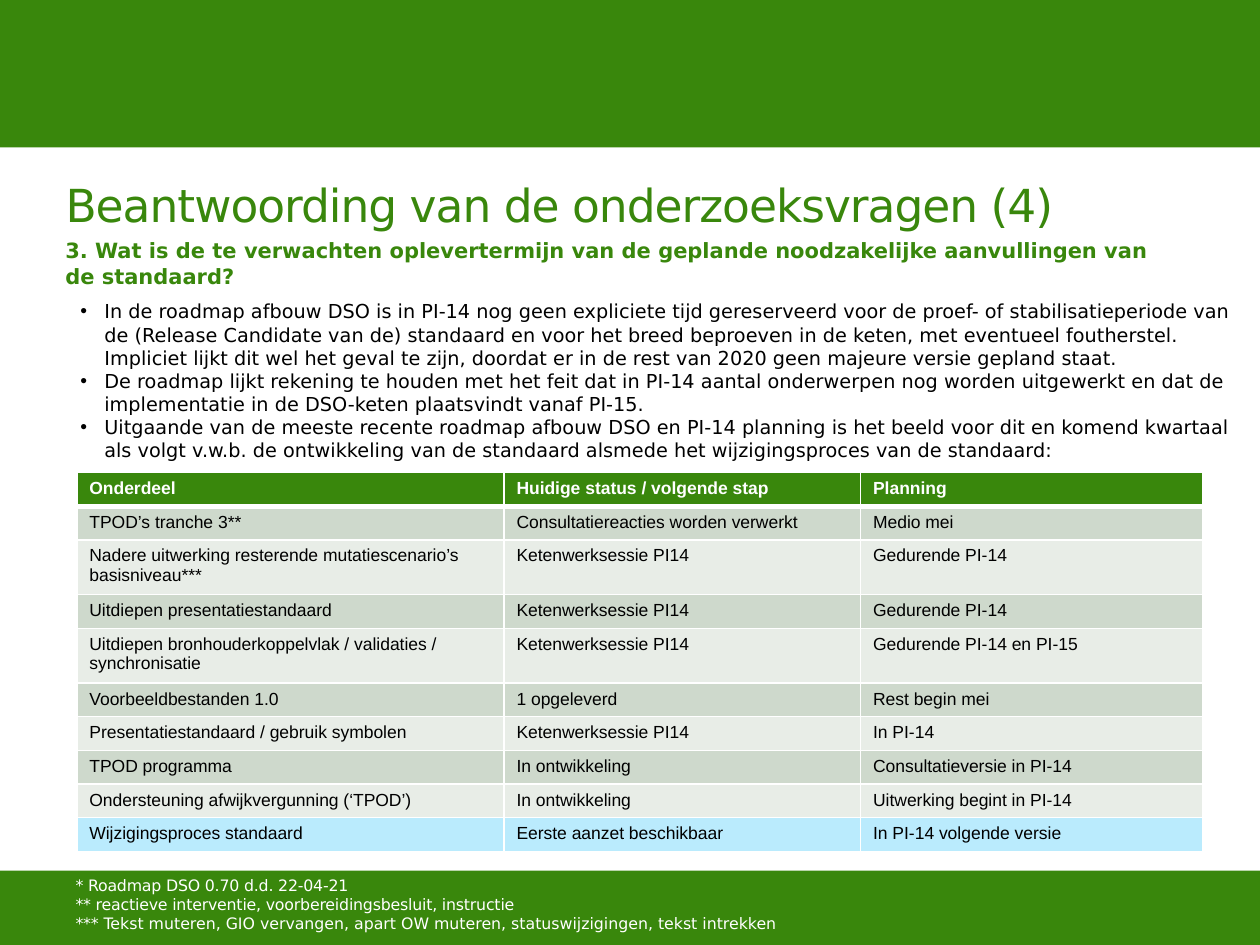
from pptx import Presentation
from pptx.dml.color import RGBColor
from pptx.enum.shapes import MSO_SHAPE
from pptx.enum.text import MSO_ANCHOR, PP_ALIGN
from pptx.oxml.ns import qn
from pptx.util import Inches, Pt
from lxml import etree

RECT = MSO_SHAPE.RECTANGLE
MIDDLE, TOP = MSO_ANCHOR.MIDDLE, MSO_ANCHOR.TOP
LEFT = PP_ALIGN.LEFT
W, H = 10, 7.5
GREEN, WHITE, BLACK = "39870C", "FFFFFF", "000000"
DARK_BAND, LIGHT_BAND, HIGHLIGHT = "CED9CC", "E8EDE7", "BAEBFD"
SANS, ARIAL = "DejaVu Sans", "Arial"
MARGIN, TEXT_WIDTH = 0.42, 8.97

TITLE = "Beantwoording van de onderzoeksvragen (4)"
QUESTION = ("3. Wat is de te verwachten oplevertermijn van de geplande "
            "noodzakelijke aanvullingen van de standaard?")
BULLETS = [
    "In de roadmap afbouw DSO is in PI-14 nog geen expliciete tijd gereserveerd voor de "
    "proef- of stabilisatieperiode van de (Release Candidate van de) standaard en voor het "
    "breed beproeven in de keten, met eventueel foutherstel. Impliciet lijkt dit wel het "
    "geval te zijn, doordat er in de rest van 2020 geen majeure versie gepland staat.",
    "De roadmap lijkt rekening te houden met het feit dat in PI-14 aantal onderwerpen nog "
    "worden uitgewerkt en dat de implementatie in de DSO-keten plaatsvindt vanaf PI-15.",
    "Uitgaande van de meeste recente roadmap afbouw DSO en PI-14 planning is het beeld voor "
    "dit en komend kwartaal als volgt v.w.b. de ontwikkeling van de standaard alsmede het "
    "wijzigingsproces van de standaard:",
]
ROWS = [
    ("Onderdeel", "Huidige status / volgende stap", "Planning"),
    ("TPOD’s tranche 3**", "Consultatiereacties worden verwerkt", "Medio mei"),
    ("Nadere uitwerking resterende mutatiescenario’s basisniveau***",
     "Ketenwerksessie PI14", "Gedurende PI-14"),
    ("Uitdiepen presentatiestandaard", "Ketenwerksessie PI14", "Gedurende PI-14"),
    ("Uitdiepen bronhouderkoppelvlak / validaties / synchronisatie",
     "Ketenwerksessie PI14", "Gedurende PI-14 en PI-15"),
    ("Voorbeeldbestanden 1.0", "1 opgeleverd", "Rest begin mei"),
    ("Presentatiestandaard / gebruik symbolen", "Ketenwerksessie PI14", "In PI-14"),
    ("TPOD programma", "In ontwikkeling", "Consultatieversie in PI-14"),
    ("Ondersteuning afwijkvergunning (‘TPOD’)", "In ontwikkeling",
     "Uitwerking begint in PI-14"),
    ("Wijzigingsproces standaard", "Eerste aanzet beschikbaar", "In PI-14 volgende versie"),
]
COLUMN_WIDTHS = [3.39, 2.83, 2.72]
ROW_HEIGHT = 0.25
FOOTNOTES = [
    "* Roadmap DSO 0.70 d.d. 22-04-21",
    "** reactieve interventie, voorbereidingsbesluit, instructie",
    "*** ",
]
LAST_FOOTNOTE = ("Tekst muteren, GIO vervangen, apart OW muteren, "
                 "statuswijzigingen, tekst intrekken")


def rgb(color):
    return RGBColor.from_string(color)


def add_run(p, text, size, color, font=SANS, bold=False, spacing=0):
    r = p.add_run()
    r.text = text
    r.font.size, r.font.name, r.font.bold = Pt(size), font, bold
    r.font.color.rgb = rgb(color)
    if spacing:
        r.font._element.set("spc", str(round(spacing * 100)))


def add_band(s, top, height):
    sp = s.shapes.add_shape(RECT, 0, Inches(top), Inches(W), Inches(height))
    sp.shadow.inherit = False
    sp.fill.solid()
    sp.fill.fore_color.rgb = rgb(GREEN)
    sp.line.fill.background()


def add_textbox(s, x, y, w, h):
    tf = s.shapes.add_textbox(Inches(x), Inches(y), Inches(w), Inches(h)).text_frame
    tf.word_wrap = True
    tf.vertical_anchor = TOP
    return tf


def set_title(s):
    sp = s.shapes.title
    sp.left, sp.top = Inches(MARGIN), Inches(1.31)
    sp.width, sp.height = Inches(TEXT_WIDTH), Inches(0.62)
    sp.fill.solid()
    sp.fill.fore_color.rgb = rgb(WHITE)
    tf = sp.text_frame
    tf.vertical_anchor = MIDDLE
    p = tf.paragraphs[0]
    p.alignment = LEFT
    add_run(p, TITLE, 26, GREEN, spacing=-0.6)


def add_bullets(tf, items):
    for i, item in enumerate(items):
        p = tf.add_paragraph() if i else tf.paragraphs[0]
        pPr = p._p.get_or_add_pPr()
        pPr.set("marL", str(Inches(0.19)))
        pPr.set("indent", str(-Inches(0.19)))
        etree.SubElement(pPr, qn("a:buFont")).set("typeface", ARIAL)
        etree.SubElement(pPr, qn("a:buChar")).set("char", "•")
        add_run(p, item, 11, BLACK)


def set_borders(cell, top, bottom):
    tcPr = cell._tc.get_or_add_tcPr()
    for side, width in (("L", 1), ("R", 1), ("T", top), ("B", bottom)):
        ln = etree.SubElement(tcPr, qn("a:ln" + side))
        ln.set("w", str(Pt(width)))
        fill = etree.SubElement(ln, qn("a:solidFill"))
        etree.SubElement(fill, qn("a:srgbClr")).set("val", WHITE)


def row_fill(i):
    if i == 0:
        return GREEN
    if i == len(ROWS) - 1:
        return HIGHLIGHT
    return DARK_BAND if i % 2 else LIGHT_BAND


def add_planning_table(s):
    table = s.shapes.add_table(
        len(ROWS), len(COLUMN_WIDTHS), Inches(0.61), Inches(3.75),
        Inches(sum(COLUMN_WIDTHS)), Inches(ROW_HEIGHT * len(ROWS))).table
    for column, width in zip(table.columns, COLUMN_WIDTHS):
        column.width = Inches(width)
    for i, row in enumerate(ROWS):
        header = i == 0
        for j, text in enumerate(row):
            cell = table.cell(i, j)
            # The rule under the header is thicker than the other lines
            set_borders(cell, 3 if i == 1 else 1, 3 if header else 1)
            cell.fill.solid()
            cell.fill.fore_color.rgb = rgb(row_fill(i))
            add_run(cell.text_frame.paragraphs[0], text, 10,
                    WHITE if header else BLACK, ARIAL, header)


def add_footnotes(s):
    tf = add_textbox(s, 0.6, 6.95, 8.84, 0.25)
    tf.margin_left = tf.margin_right = tf.margin_top = tf.margin_bottom = 0
    p = tf.paragraphs[0]
    for i, note in enumerate(FOOTNOTES):
        if i:
            p.add_line_break()
        add_run(p, note, 9, WHITE, spacing=-0.1)
    add_run(p, LAST_FOOTNOTE, 9, WHITE)


def main():
    prs = Presentation()
    prs.slide_width, prs.slide_height = Inches(W), Inches(H)
    s = prs.slides.add_slide(prs.slide_layouts[5])

    # Green bands at top and bottom
    add_band(s, 0, 1.17)
    add_band(s, 6.91, H - 6.91)

    # Title and research question
    set_title(s)
    tf = add_textbox(s, MARGIN, 1.84, TEXT_WIDTH, 0.5)
    add_run(tf.paragraphs[0], QUESTION, 12, GREEN, bold=True)

    # Answer, planning and footnotes
    add_planning_table(s)
    add_bullets(add_textbox(s, 0.54, 2.33, 9.34, 1.4), BULLETS)
    add_footnotes(s)

    prs.save("out.pptx")


if __name__ == "__main__":
    main()
